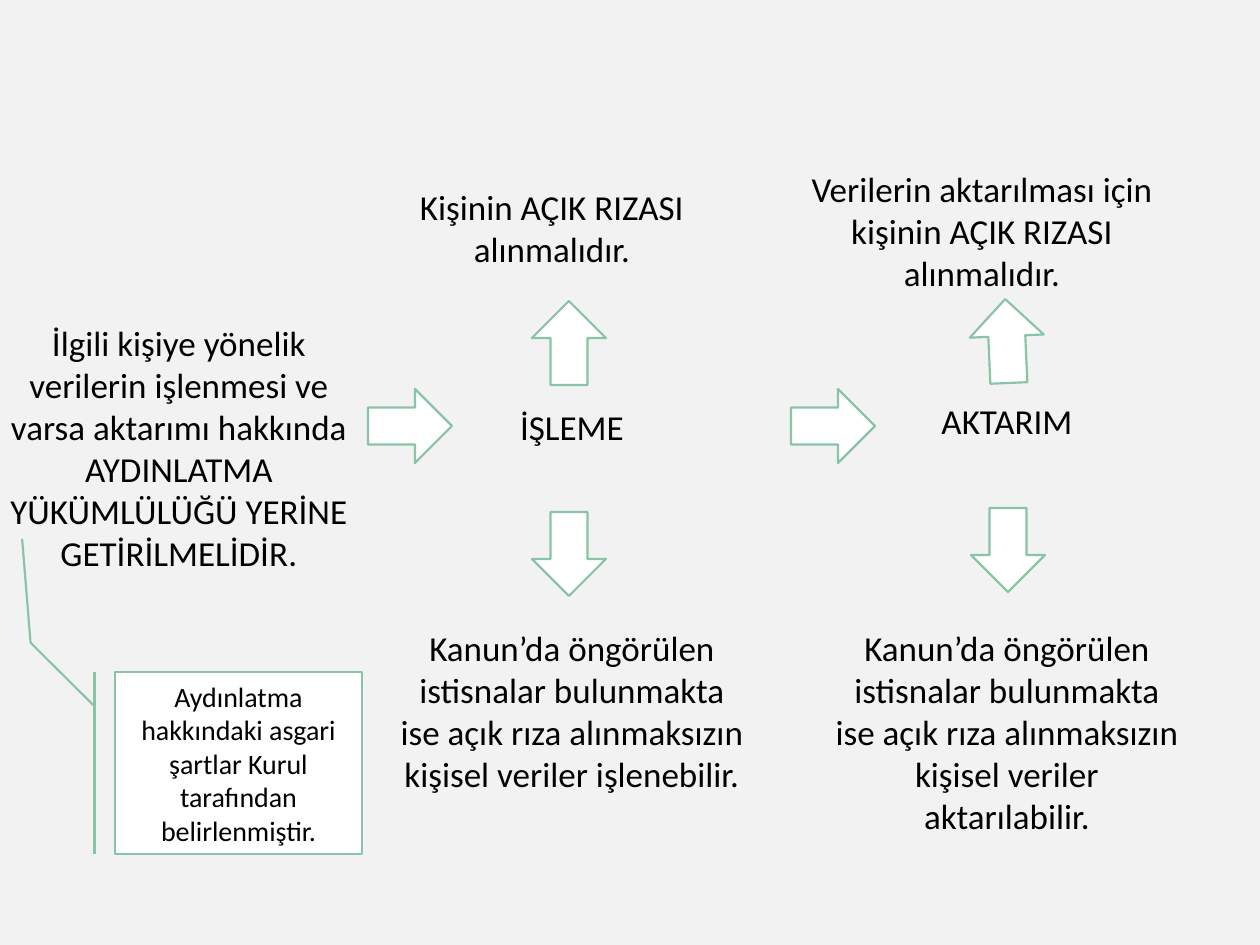
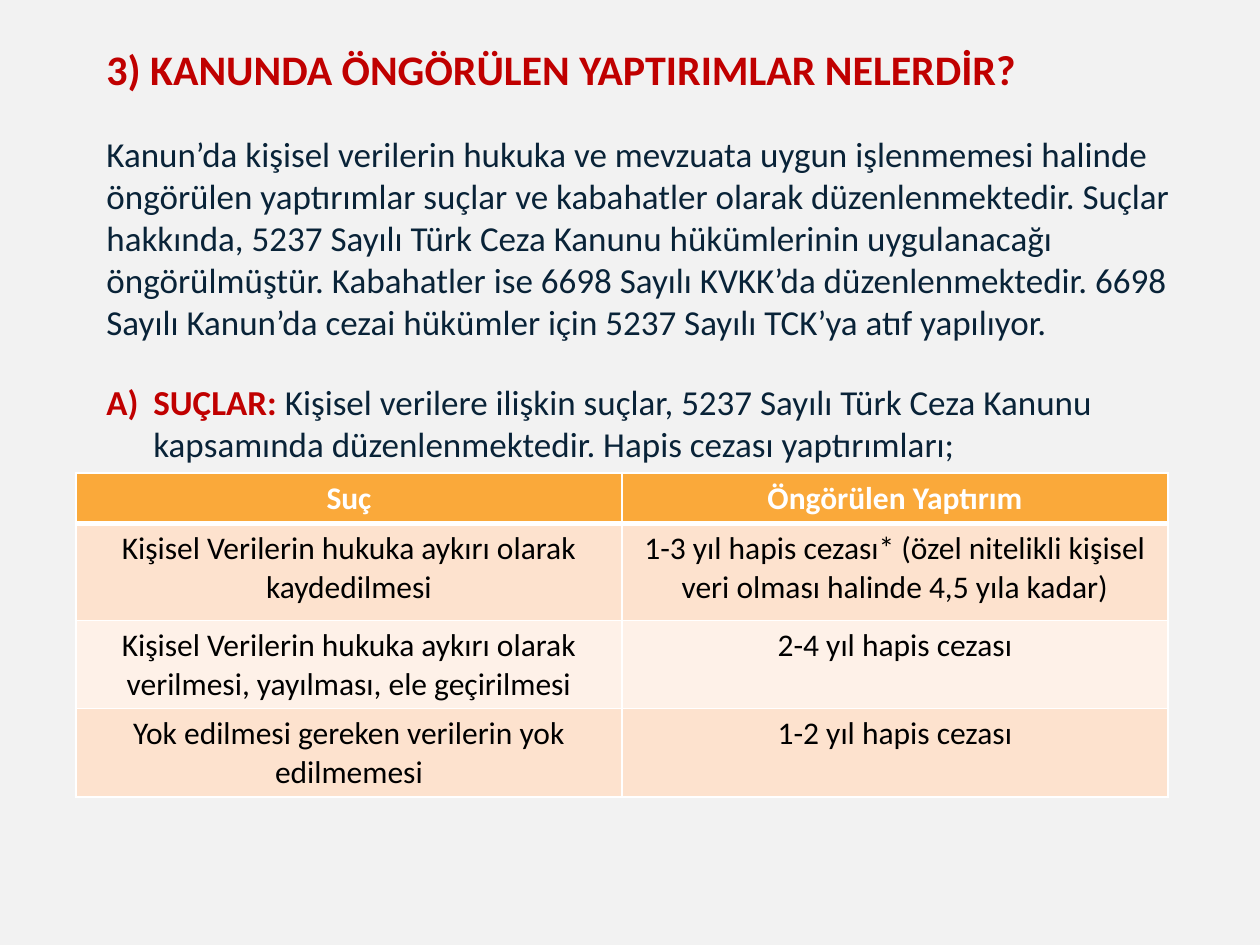
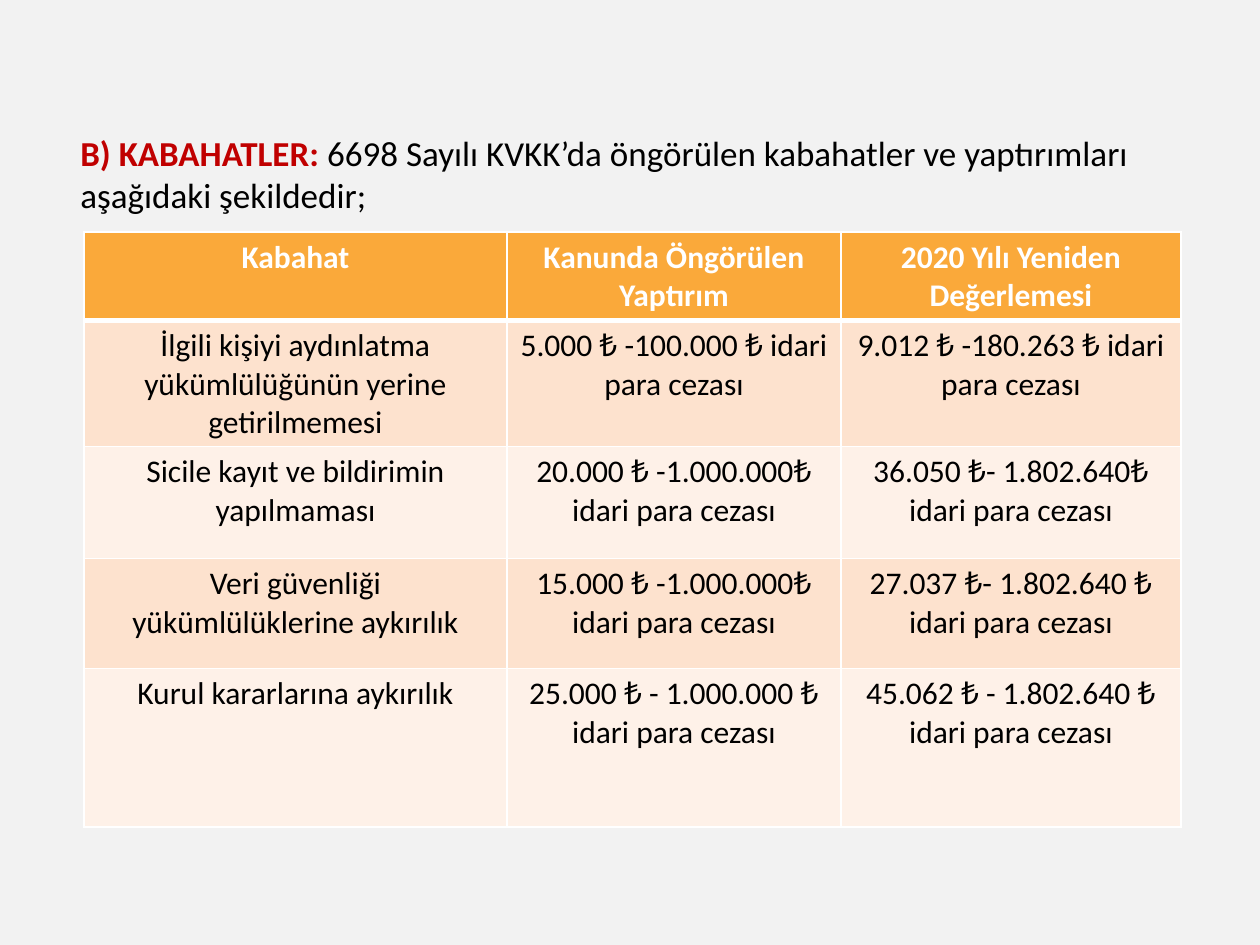
from dataclasses import dataclass

from lxml import etree
from pptx import Presentation
from pptx.dml.color import RGBColor
from pptx.enum import shapes, text
from pptx.oxml.ns import qn
from pptx.util import Emu, Pt

EMU_PER_PX = 914400 / 126


@dataclass(frozen=True)
class Theme:
    font: str = "Calibri"
    background: str = "F2F2F2"
    ink: str = "000000"
    navy: str = "092338"
    red: str = "C00000"
    white: str = "FFFFFF"
    green: str = "8AC4A7"
    header: str = "FAA93A"
    bands: tuple = ("FDE2CE", "FEF1E8")
    title_size: int = 24
    body_size: int = 20
    table_size: int = 18
    note_size: int = 16
    section_gap: int = 22
    outline: float = 1.25
    grid: int = 1
    header_rule: int = 3


def px(*lengths):
    return [Emu(round(length * EMU_PER_PX)) for length in lengths]


def paint(fill, color):
    fill.solid()
    fill.fore_color.rgb = RGBColor.from_string(color)


class Deck:
    def __init__(self, theme):
        self.theme = theme
        self.prs = Presentation()
        self.prs.slide_width, self.prs.slide_height = px(1260, 945)
        self.slide = None

    def new_slide(self):
        self.slide = self.prs.slides.add_slide(self.prs.slide_layouts[6])
        paint(self.slide.background.fill, self.theme.background)

    def style(self, run, size, color, bold=False):
        font = run.font
        font.name, font.size, font.bold = self.theme.font, Pt(size), bold
        font.color.rgb = RGBColor.from_string(color)

    def centre(self, frame, size, color, bold=False):
        for paragraph in frame.paragraphs:
            paragraph.alignment = text.PP_ALIGN.CENTER
            for run in paragraph.runs:
                self.style(run, size, color, bold)

    def frame(self, left, top, width, height):
        frame = self.slide.shapes.add_textbox(*px(left, top, width, height)).text_frame
        frame.word_wrap = True
        return frame

    def label(self, left, top, height, words):
        frame = self.frame(left, top, 368, height)
        frame.text = words
        self.centre(frame, self.theme.body_size, self.theme.ink)

    def passage(self, box, sections, numbered=None):
        """Write sections of (words, size, colour, bold) runs, one paragraph each."""
        frame = self.frame(*box)
        for index, section in enumerate(sections):
            paragraph = frame.add_paragraph() if index else frame.paragraphs[0]
            if index:
                paragraph.space_before = Pt(self.theme.section_gap)
            if index == numbered:
                self.number(paragraph)
            for words, *look in section:
                run = paragraph.add_run()
                run.text = words
                self.style(run, *look)

    def number(self, paragraph):
        properties = paragraph._p.get_or_add_pPr()
        indent = px(47)[0]
        properties.set("marL", str(indent))
        properties.set("indent", str(-indent))
        etree.SubElement(properties, qn("a:buFont"), typeface="+mj-lt")
        etree.SubElement(properties, qn("a:buAutoNum"), type="alphaUcParenR")

    def shape(self, kind, left, top, width, height):
        shape = self.slide.shapes.add_shape(kind, *px(left, top, width, height))
        shape.shadow.inherit = False
        paint(shape.fill, self.theme.white)
        paint(shape.line.fill, self.theme.green)
        shape.line.width = Pt(self.theme.outline)
        return shape

    def arrow(self, left, top, rotation=0):
        arrow = self.shape(shapes.MSO_SHAPE.RIGHT_ARROW, left, top, 84, 74)
        arrow.rotation = rotation

    def callout(self, left, top, width, height, words, leader):
        kind = shapes.MSO_SHAPE.LINE_CALLOUT_2_BORDER_AND_ACCENT_BAR
        callout = self.shape(kind, left, top, width, height)
        for index, value in enumerate(leader):
            callout.adjustments[index] = value
        callout.text_frame.text = words
        callout.text_frame.word_wrap = True
        self.centre(callout.text_frame, self.theme.note_size, self.theme.ink)

    def borders(self, cell, **widths):
        properties = cell._tc.get_or_add_tcPr()
        for side in "LRTB":
            width = Pt(widths.get(side, self.theme.grid))
            line = etree.SubElement(properties, qn(f"a:ln{side}"), w=str(width))
            fill = etree.SubElement(line, qn("a:solidFill"))
            etree.SubElement(fill, qn("a:srgbClr"), val=self.theme.white)

    def table(self, left, top, widths, heights, rows):
        theme = self.theme
        size = px(left, top, sum(widths), sum(heights))
        table = self.slide.shapes.add_table(len(rows), len(widths), *size).table
        table.horz_banding = False
        for column, width in zip(table.columns, px(*widths)):
            column.width = width
        for row, height in zip(table.rows, px(*heights)):
            row.height = height
        rules = {0: {"B": theme.header_rule}, 1: {"T": theme.header_rule}}
        for r, row in enumerate(rows):
            for c, words in enumerate(row):
                cell = table.cell(r, c)
                cell.text = words
                self.borders(cell, **rules.get(r, {}))
                paint(cell.fill, theme.bands[(r - 1) % 2] if r else theme.header)
                color = theme.ink if r else theme.white
                self.centre(cell.text_frame, theme.table_size, color, bold=not r)


def consent_flow(deck):
    deck.new_slide()
    exception = "Kanun’da öngörülen istisnalar bulunmakta ise açık rıza alınmaksızın kişisel veriler "
    for label in (
        (-5, 315, 267, "İlgili kişiye yönelik verilerin işlenmesi ve varsa aktarımı hakkında "
                       "AYDINLATMA YÜKÜMLÜLÜĞÜ YERİNE GETİRİLMELİDİR."),
        (368, 179, 97, "Kişinin AÇIK RIZASI alınmalıdır."),
        (388, 399, 55, "İŞLEME"),
        (388, 620, 183, exception + "işlenebilir."),
        (798, 161, 140, "Verilerin aktarılması için kişinin AÇIK RIZASI alınmalıdır."),
        (823, 393, 55, "AKTARIM"),
        (823, 620, 224, exception + "aktarılabilir."),
    ):
        deck.label(*label)
    deck.callout(115, 672, 247, 182,
                 "Aydınlatma hakkındaki asgari şartlar Kurul tarafından belirlenmiştir.",
                 (0.188, -0.083, -0.161, -0.342, -0.732, -0.376))
    for arrow in ((368, 389), (791, 389), (527, 306, 270), (527, 517, 90),
                  (965, 304, 267.5), (966, 513, 90)):
        deck.arrow(*arrow)


def crimes(deck):
    theme = deck.theme
    deck.new_slide()
    deck.passage((94, 37, 1126, 517), [
        [("3) KANUNDA ÖNGÖRÜLEN YAPTIRIMLAR NELERDİR?", theme.title_size, theme.red, True)],
        [("Kanun’da kişisel verilerin hukuka ve mevzuata uygun işlenmemesi halinde öngörülen "
          "yaptırımlar suçlar ve kabahatler olarak düzenlenmektedir. Suçlar hakkında, 5237 Sayılı "
          "Türk Ceza Kanunu hükümlerinin uygulanacağı öngörülmüştür. Kabahatler ise 6698 Sayılı "
          "KVKK’da düzenlenmektedir. 6698 Sayılı Kanun’da cezai hükümler için 5237 Sayılı TCK’ya "
          "atıf yapılıyor.", theme.body_size, theme.navy)],
        [("SUÇLAR: ", theme.body_size, theme.red, True),
         ("Kişisel verilere ilişkin suçlar, 5237 Sayılı Türk Ceza Kanunu kapsamında "
          "düzenlenmektedir. Hapis cezası yaptırımları;", theme.body_size, theme.navy)],
    ], numbered=2)
    deck.table(76, 473, (546, 546), (49, 97, 88, 88), [
        ("Suç", "Öngörülen Yaptırım"),
        ("Kişisel Verilerin hukuka aykırı olarak kaydedilmesi",
         "1-3 yıl hapis cezası* (özel nitelikli kişisel veri olması halinde 4,5 yıla kadar)"),
        ("Kişisel Verilerin hukuka aykırı olarak verilmesi, yayılması, ele geçirilmesi",
         "2-4 yıl hapis cezası"),
        ("Yok edilmesi gereken verilerin yok edilmemesi", "1-2 yıl hapis cezası"),
    ])


def misdemeanours(deck):
    theme = deck.theme
    deck.new_slide()
    deck.passage((68, 125, 1124, 97), [
        [("B) KABAHATLER: ", theme.body_size, theme.red, True),
         ("6698 Sayılı KVKK’da öngörülen kabahatler ve yaptırımları aşağıdaki şekildedir;",
          theme.body_size, theme.ink)],
    ])
    fine = "idari para cezası"
    deck.table(84, 232, (423, 334, 340), (86, 126, 112, 110, 159), [
        ("Kabahat", "Kanunda Öngörülen Yaptırım", "2020 Yılı Yeniden Değerlemesi"),
        ("İlgili kişiyi aydınlatma yükümlülüğünün yerine getirilmemesi",
         f"5.000 ₺ -100.000 ₺ {fine}", f"9.012 ₺ -180.263 ₺ {fine}"),
        ("Sicile kayıt ve bildirimin yapılmaması",
         f"20.000 ₺ -1.000.000₺ {fine}", f"36.050 ₺- 1.802.640₺\n{fine}"),
        ("Veri güvenliği yükümlülüklerine aykırılık",
         f"15.000 ₺ -1.000.000₺ {fine}", f"27.037 ₺- 1.802.640 ₺\n{fine}"),
        ("Kurul kararlarına aykırılık",
         f"25.000 ₺ - 1.000.000 ₺ {fine}", f"45.062 ₺ - 1.802.640 ₺\n{fine}"),
    ])


def main():
    deck = Deck(Theme())
    for build in (consent_flow, crimes, misdemeanours):
        build(deck)
    deck.prs.save("out.pptx")


if __name__ == "__main__":
    main()
